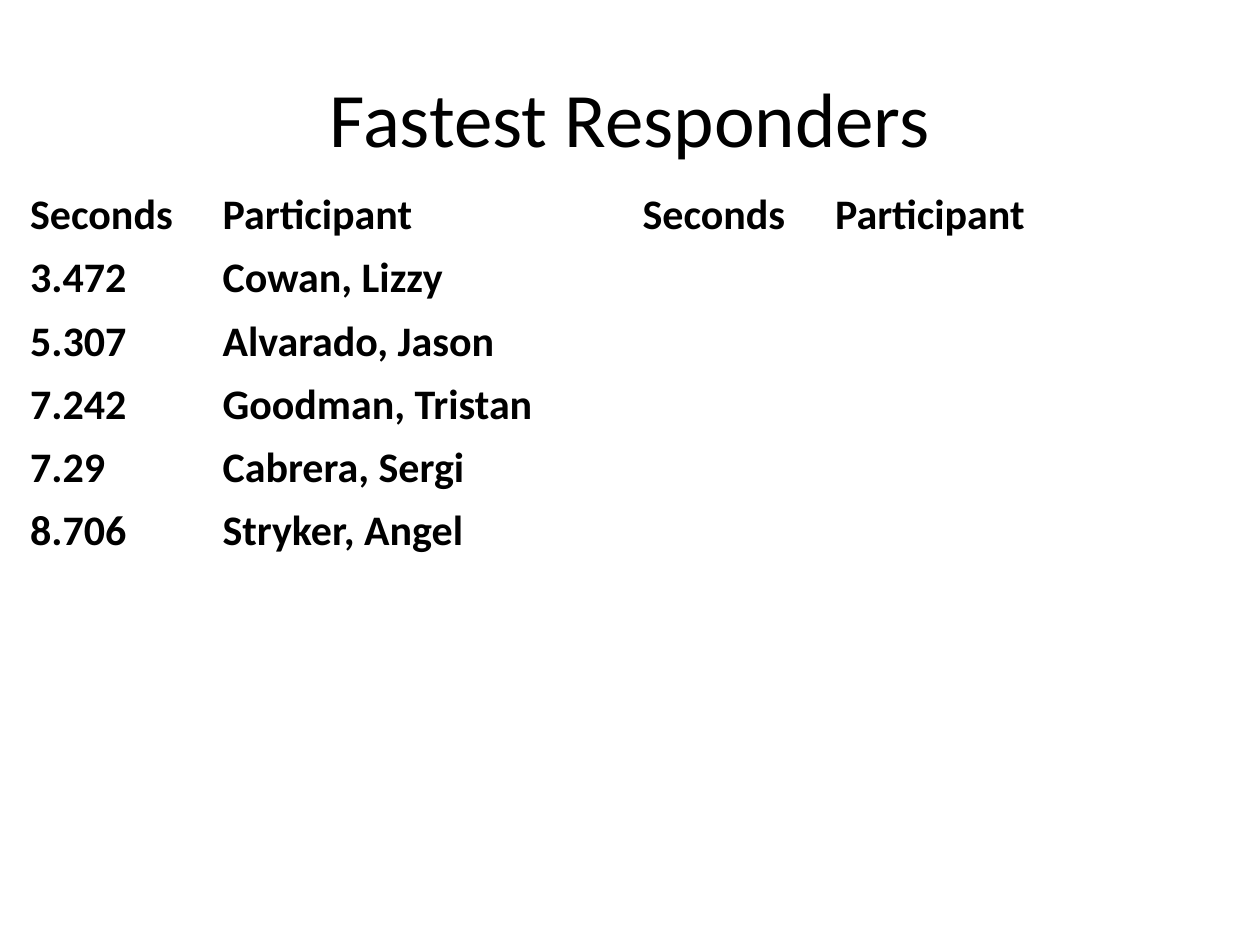
from dataclasses import dataclass

from lxml import etree
from pptx import Presentation
from pptx.dml.color import RGBColor
from pptx.enum import text
from pptx.oxml import ns
from pptx.util import Pt


@dataclass(frozen=True)
class Theme:
    font: str = "Calibri"
    ink: str = "000000"
    paper: str = "FFFFFF"
    title_size: int = 44
    cell_size: int = 24
    border: int = 1
    bottom_border: int = 3


THEME = Theme()
HEADINGS = ("Seconds", "Participant")
RESPONDERS = [
    ("3.472", "Cowan, Lizzy"),
    ("5.307", "Alvarado, Jason"),
    ("7.242", "Goodman, Tristan"),
    ("7.29", "Cabrera, Sergi"),
    ("8.706", "Stryker, Angel"),
]
ROW_COUNT = 11
ROW_HEIGHT = 36
COLUMN_WIDTHS = (110, 240) * 2


def style_font(font, size, bold=False):
    font.name = THEME.font
    font.size = Pt(size)
    font.bold = bold
    font.color.rgb = RGBColor.from_string(THEME.ink)


def add_title(s, title):
    tf = s.shapes.add_textbox(Pt(36), Pt(21.6), Pt(648), Pt(90)).text_frame
    tf.word_wrap = True
    tf.vertical_anchor = text.MSO_ANCHOR.MIDDLE
    tf.text = title
    p = tf.paragraphs[0]
    p.alignment = text.PP_ALIGN.CENTER
    style_font(p.runs[0].font, THEME.title_size)


def add_borders(cell, bottom):
    tc_pr = cell._tc.get_or_add_tcPr()
    widths = {"L": THEME.border, "R": THEME.border, "T": THEME.border, "B": bottom}
    for side, width in widths.items():
        ln = etree.SubElement(tc_pr, ns.qn(f"a:ln{side}"), w=str(Pt(width)))
        fill = etree.SubElement(ln, ns.qn("a:solidFill"))
        etree.SubElement(fill, ns.qn("a:srgbClr"), val=THEME.paper)


def fill_cell(cell, value, bottom):
    add_borders(cell, bottom)
    cell.fill.solid()
    cell.fill.fore_color.rgb = RGBColor.from_string(THEME.paper)
    p = cell.text_frame.paragraphs[0]
    if value:
        p.text = value
        style_font(p.runs[0].font, THEME.cell_size, bold=True)


def add_results(s):
    table = s.shapes.add_table(
        ROW_COUNT, len(COLUMN_WIDTHS), Pt(10), Pt(105),
        Pt(sum(COLUMN_WIDTHS)), Pt(ROW_COUNT * ROW_HEIGHT),
    ).table
    table.first_row = table.horz_banding = False
    for column, width in zip(table.columns, COLUMN_WIDTHS):
        column.width = Pt(width)
    rows = [HEADINGS * 2] + [entry + ("", "") for entry in RESPONDERS]
    rows += [("",) * len(COLUMN_WIDTHS)] * (ROW_COUNT - len(rows))
    for i, values in enumerate(rows):
        bottom = THEME.bottom_border if i == ROW_COUNT - 1 else THEME.border
        for cell, value in zip(table.rows[i].cells, values):
            fill_cell(cell, value, bottom)


def main():
    prs = Presentation()
    prs.slide_width, prs.slide_height = Pt(720), Pt(540)
    s = prs.slides.add_slide(prs.slide_layouts[6])
    add_title(s, "Fastest Responders")
    add_results(s)
    prs.save("out.pptx")


if __name__ == "__main__":
    main()
